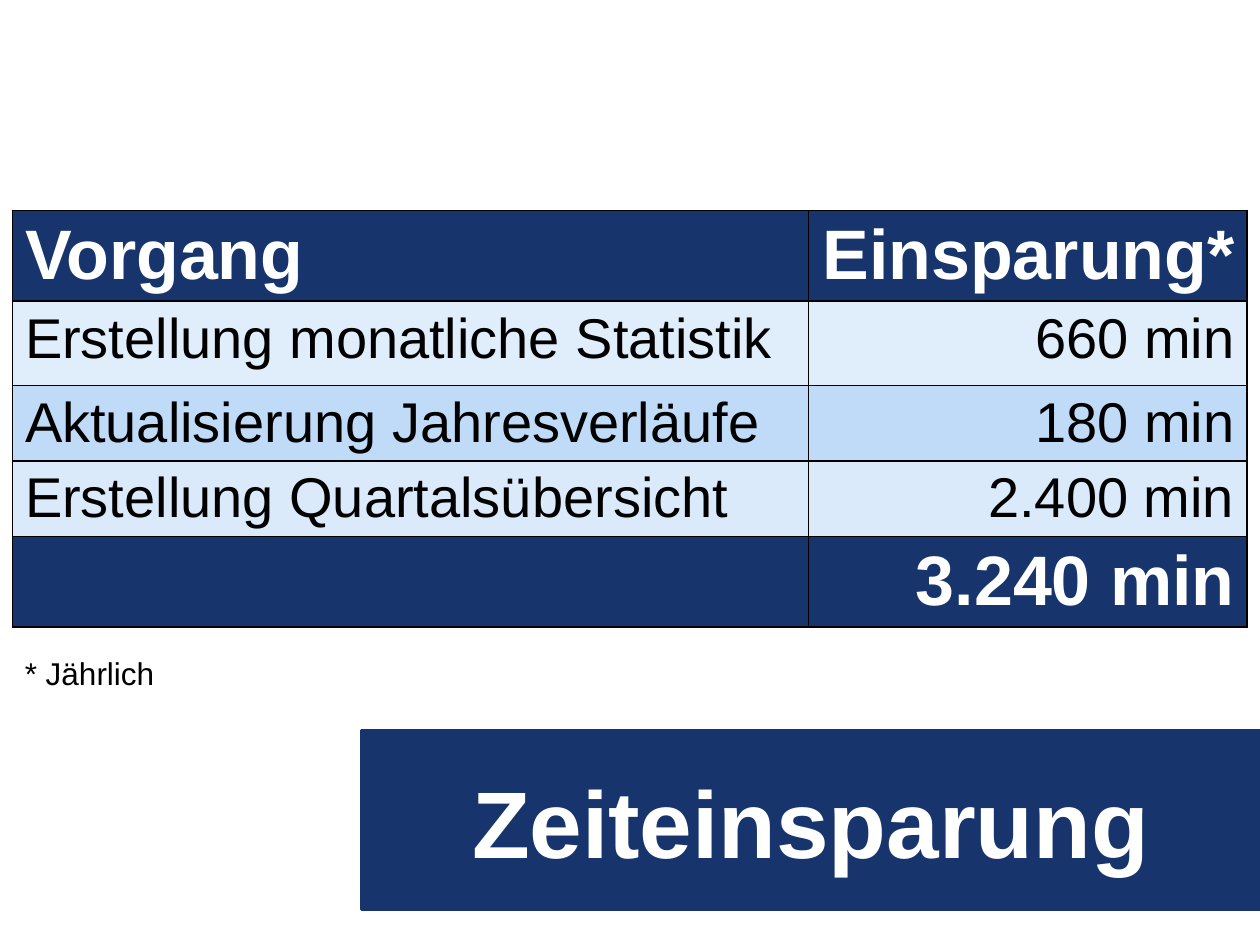
from lxml import etree
from pptx import Presentation
from pptx import util as u
from pptx.dml import color
from pptx.enum import text
from pptx.oxml import ns

NAVY, WHITE, BLACK = "17356C", "FFFFFF", "000000"
LEFT, RIGHT, MID = text.PP_ALIGN.LEFT, text.PP_ALIGN.RIGHT, text.PP_ALIGN.CENTER
HEAD = {"size": u.Pt(40), "bold": True}
BODY = {"size": u.Pt(32), "bold": False}


def rgb(code):
    return color.RGBColor.from_string(code)


def box(*sides):
    return [u.Cm(side) for side in sides]


class Deck:
    font = "Arial"

    def __init__(self, wide, high):
        self.prs = Presentation()
        self.prs.slide_width, self.prs.slide_height = box(wide, high)
        self.slide = self.prs.slides.add_slide(self.prs.slide_layouts[5])

    def label(self, frame, words, tint, align, style):
        para = frame.paragraphs[0]
        para.alignment = align
        run = para.add_run()
        run.text = words
        for key, value in {"name": self.font, **style}.items():
            setattr(run.font, key, value)
        run.font.color.rgb = rgb(tint)

    def title(self, words, place):
        bar = self.slide.shapes.title
        bar.left, bar.top, bar.width, bar.height = box(*place)
        bar.fill.solid()
        bar.fill.fore_color.rgb = bar.line.color.rgb = rgb(NAVY)
        bar.line.width = u.Pt(2)
        frame = bar.text_frame
        frame.auto_size = text.MSO_AUTO_SIZE.NONE
        frame.vertical_anchor = text.MSO_ANCHOR.MIDDLE
        self.label(frame, words, WHITE, MID, {"size": u.Pt(54), "bold": True})

    def edge(self, cell):
        props = cell._tc.get_or_add_tcPr()
        for tag in ("lnL", "lnR", "lnT", "lnB"):
            line = etree.SubElement(props, ns.qn("a:" + tag), w=str(u.Pt(1)))
            fill = etree.SubElement(line, ns.qn("a:solidFill"))
            etree.SubElement(fill, ns.qn("a:srgbClr"), val=BLACK)

    def table(self, rows, left, top, wides):
        high = sum(row[0] for row in rows)
        place = box(left, top, sum(wides), high)
        grid = self.slide.shapes.add_table(len(rows), len(wides), *place).table
        for col, wide in zip(grid.columns, wides):
            col.width = u.Cm(wide)
        for r, (tall, back, tint, style, *words) in enumerate(rows):
            grid.rows[r].height = u.Cm(tall)
            for c, word in enumerate(words):
                cell = grid.cell(r, c)
                self.edge(cell)
                cell.fill.solid()
                cell.fill.fore_color.rgb = rgb(back)
                if word:
                    self.label(cell.text_frame, word, tint, (LEFT, RIGHT)[c], style)

    def note(self, words, place):
        frame = self.slide.shapes.add_textbox(*box(*place)).text_frame
        frame.word_wrap = False
        frame.auto_size = text.MSO_AUTO_SIZE.SHAPE_TO_FIT_TEXT
        self.label(frame, words, BLACK, LEFT, {"size": u.Pt(18)})


def main():
    deck = Deck(25.4, 19.05)

    # Title bar at the foot
    deck.title("Zeiteinsparung", (7.29, 14.73, 18.11, 3.61))

    # Savings: height, fill, text colour, style, words
    rows = [
        (1.83, NAVY, WHITE, HEAD, "Vorgang", "Einsparung*"),
        (1.7, "E0EEFC", BLACK, BODY, "Erstellung monatliche Statistik", "660 min"),
        (1.52, "C0DBF7", BLACK, BODY, "Aktualisierung Jahresverläufe", "180 min"),
        (1.52, "DAEAFB", BLACK, BODY, "Erstellung Quartalsübersicht", "2.400 min"),
        (1.83, NAVY, WHITE, HEAD, "", "3.240 min"),
    ]
    deck.table(rows, 0.25, 4.24, (16.05, 8.84))

    # Footnote
    deck.note("* Jährlich", (0.25, 13.06, 3.15, 1.02))

    deck.prs.save("out.pptx")


if __name__ == "__main__":
    main()
